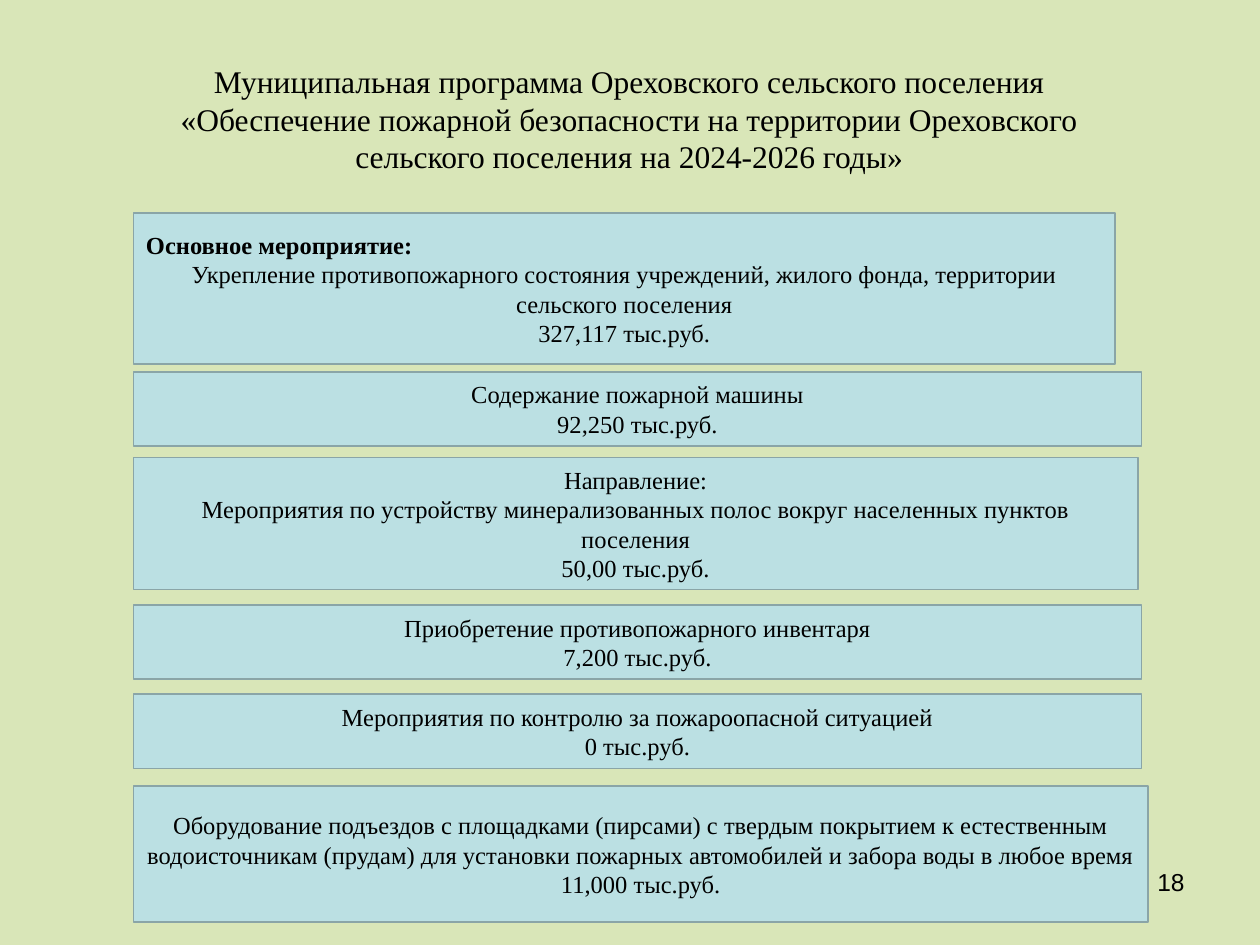
from pptx import Presentation
from pptx.dml.color import RGBColor
from pptx.enum.shapes import MSO_SHAPE
from pptx.enum.text import MSO_ANCHOR, MSO_AUTO_SIZE, PP_ALIGN
from pptx.util import Inches, Pt

BACKGROUND = RGBColor(0xD9, 0xE6, 0xB8)
BOX_FILL = RGBColor(0xBB, 0xE0, 0xE3)
BOX_LINE = RGBColor(0x8A, 0xA5, 0xA7)
BLACK = RGBColor(0, 0, 0)
SERIF = "Times New Roman"
BOX_LEFT = 1.06

TITLE = ("Муниципальная программа Ореховского сельского поселения "
         "«Обеспечение пожарной безопасности на территории Ореховского "
         "сельского поселения на 2024-2026 годы»")

# top, width, height, heading, lines
MEASURES = [
    (1.69, 7.79, 1.2, "Основное мероприятие:",
     ["Укрепление противопожарного состояния учреждений, жилого фонда, "
      "территории сельского поселения", "327,117 тыс.руб."]),
    (2.95, 8, 0.59, None,
     ["Содержание пожарной машины", "92,250 тыс.руб."]),
    (3.63, 7.97, 1.05, None,
     ["Направление:",
      "Мероприятия по устройству минерализованных полос вокруг "
      "населенных пунктов поселения", "50,00 тыс.руб."]),
    (4.8, 8, 0.59, None,
     ["Приобретение противопожарного инвентаря", "7,200 тыс.руб."]),
    (5.51, 8, 0.59, None,
     ["Мероприятия по контролю за пожароопасной ситуацией",
      "0 тыс.руб."]),
    (6.24, 8.05, 1.08, None,
     ["Оборудование подъездов с площадками (пирсами) с твердым покрытием "
      "к естественным водоисточникам (прудам) для установки пожарных "
      "автомобилей и забора воды в любое время", "11,000 тыс.руб."]),
]


def inches(*lengths):
    return [Inches(length) for length in lengths]


def format_paragraph(p, size, align=PP_ALIGN.CENTER, font=SERIF, bold=False):
    p.alignment = align
    p.font.name = font
    p.font.size = Pt(size)
    p.font.bold = bold
    p.font.color.rgb = BLACK


def add_title(s, left, top, width, height):
    sp = s.shapes.title
    sp.left, sp.top, sp.width, sp.height = inches(left, top, width, height)
    tf = sp.text_frame
    tf.text = TITLE
    tf.word_wrap = True
    tf.auto_size = MSO_AUTO_SIZE.NONE
    tf.vertical_anchor = MSO_ANCHOR.TOP
    format_paragraph(tf.paragraphs[0], 18)


def add_measure(s, left, top, width, height, heading, lines):
    sp = s.shapes.add_shape(MSO_SHAPE.RECTANGLE,
                            *inches(left, top, width, height))
    sp.shadow.inherit = False
    sp.fill.solid()
    sp.fill.fore_color.rgb = BOX_FILL
    sp.line.color.rgb = BOX_LINE
    sp.line.width = Pt(1)
    tf = sp.text_frame
    tf.word_wrap = True
    tf.vertical_anchor = MSO_ANCHOR.MIDDLE
    tf.text = "\n".join([heading, *lines] if heading else lines)
    for p in tf.paragraphs:
        format_paragraph(p, 14)
    if heading:
        format_paragraph(tf.paragraphs[0], 14, PP_ALIGN.LEFT, bold=True)


def add_page_number(s, left, top, width, height):
    tf = s.shapes.add_textbox(*inches(left, top, width, height)).text_frame
    tf.word_wrap = True
    tf.text = "18"
    format_paragraph(tf.paragraphs[0], 14, PP_ALIGN.RIGHT, "Arial")


def main():
    prs = Presentation()
    prs.slide_width, prs.slide_height = inches(10, 7.5)
    s = prs.slides.add_slide(prs.slide_layouts.get_by_name("Title Only"))
    s.background.fill.solid()
    s.background.fill.fore_color.rgb = BACKGROUND
    add_page_number(s, 7.17, 6.83, 2.33, 0.52)
    add_title(s, 0.98, 0.44, 8.03, 1.3)
    for top, width, height, heading, lines in MEASURES:
        add_measure(s, BOX_LEFT, top, width, height, heading, lines)
    prs.save("out.pptx")


if __name__ == "__main__":
    main()
